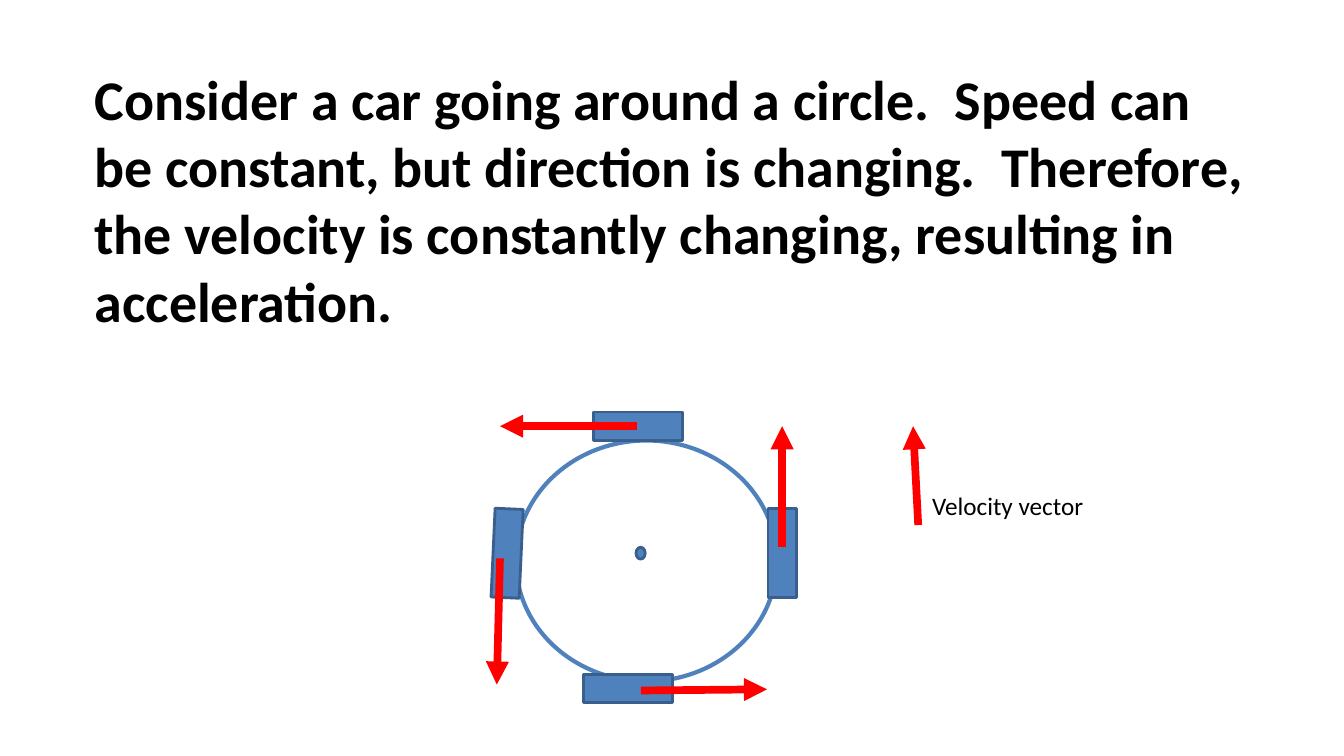
from pptx import Presentation
from pptx.dml.color import RGBColor
from pptx.enum.shapes import MSO_CONNECTOR, MSO_SHAPE
from pptx.enum.text import MSO_ANCHOR, MSO_AUTO_SIZE, PP_ALIGN
from pptx.oxml.ns import qn
from pptx.util import Cm, Pt
from lxml.etree import SubElement

BLUE, DARK_BLUE, RED = "4F81BD", "3A5F8C", "FF0000"
WHITE, BLACK = "FFFFFF", "000000"
CAR_LENGTH, CAR_WIDTH = 2.24, 0.71

# Centre of each car and its rotation
CARS = [
    (16.08, 10.74, 0),
    (19.71, 13.94, 270),
    (12.78, 13.94, 272.6),
    (15.83, 17.35, 0),
]
# Start and end of each velocity arrow; the last one belongs to the key
ARROWS = [
    (19.71, 13.79, 19.71, 10.74),
    (16.15, 17.4, 19.33, 17.37),
    (16.05, 10.74, 12.6, 10.74),
    (12.6, 14.07, 12.52, 17.25),
    (23.14, 13.23, 23.01, 10.74),
]


def color(hex_code):
    return RGBColor.from_string(hex_code)


def write(tf, text, size=18, bold=False, wrap=True):
    tf.word_wrap = wrap
    tf.auto_size = MSO_AUTO_SIZE.NONE
    tf.vertical_anchor = MSO_ANCHOR.TOP
    p = tf.paragraphs[0]
    p.alignment = PP_ALIGN.LEFT
    r = p.add_run()
    r.text = text
    r.font.name = "Calibri"
    r.font.size = Pt(size)
    r.font.bold = bold
    r.font.color.rgb = color(BLACK)


def add_title(s, text, x, y, w, h):
    sp = s.shapes.title
    sp.left, sp.top, sp.width, sp.height = Cm(x), Cm(y), Cm(w), Cm(h)
    write(sp.text_frame, text, size=40, bold=True)


def add_label(s, text, x, y, w, h):
    sp = s.shapes.add_textbox(Cm(x), Cm(y), Cm(w), Cm(h))
    write(sp.text_frame, text, wrap=False)


def add_figure(s, kind, x, y, w, h, fill=BLUE, line=DARK_BLUE, weight=2):
    sp = s.shapes.add_shape(kind, Cm(x), Cm(y), Cm(w), Cm(h))
    sp.shadow.inherit = False
    sp.fill.solid()
    sp.fill.fore_color.rgb = color(fill)
    sp.line.color.rgb = color(line)
    sp.line.width = Pt(weight)
    return sp


def add_car(s, cx, cy, rotation):
    car = add_figure(s, MSO_SHAPE.RECTANGLE, cx - CAR_LENGTH / 2,
                     cy - CAR_WIDTH / 2, CAR_LENGTH, CAR_WIDTH)
    car.rotation = rotation


def add_arrow(s, x1, y1, x2, y2):
    arrow = s.shapes.add_connector(MSO_CONNECTOR.STRAIGHT,
                                   Cm(x1), Cm(y1), Cm(x2), Cm(y2))
    arrow.line.color.rgb = color(RED)
    arrow.line.width = Pt(5.5)
    SubElement(arrow.line._get_or_add_ln(), qn("a:tailEnd"), type="triangle")
    SubElement(arrow._element.spPr, qn("a:effectLst"))


def main():
    prs = Presentation()
    prs.slide_width, prs.slide_height = Cm(33.87), Cm(19.05)
    s = prs.slides.add_slide(prs.slide_layouts[5])

    add_title(s, "Consider a car going around a circle.  Speed can be constant, "
              "but direction is changing.  Therefore, the velocity is constantly "
              "changing, resulting in acceleration.", 2.13, 1.5, 29.54, 7)
    add_figure(s, MSO_SHAPE.OVAL, 13, 11.1, 6.58, 6.07,
               fill=WHITE, line=BLUE, weight=3)
    for car in CARS:
        add_car(s, *car)
    add_figure(s, MSO_SHAPE.OVAL, 16.03, 13.79, 0.23, 0.3)
    for arrow in ARROWS:
        add_arrow(s, *arrow)
    add_label(s, "Velocity vector", 23.24, 12.22, 4.29, 1.02)

    prs.save("out.pptx")


if __name__ == "__main__":
    main()
